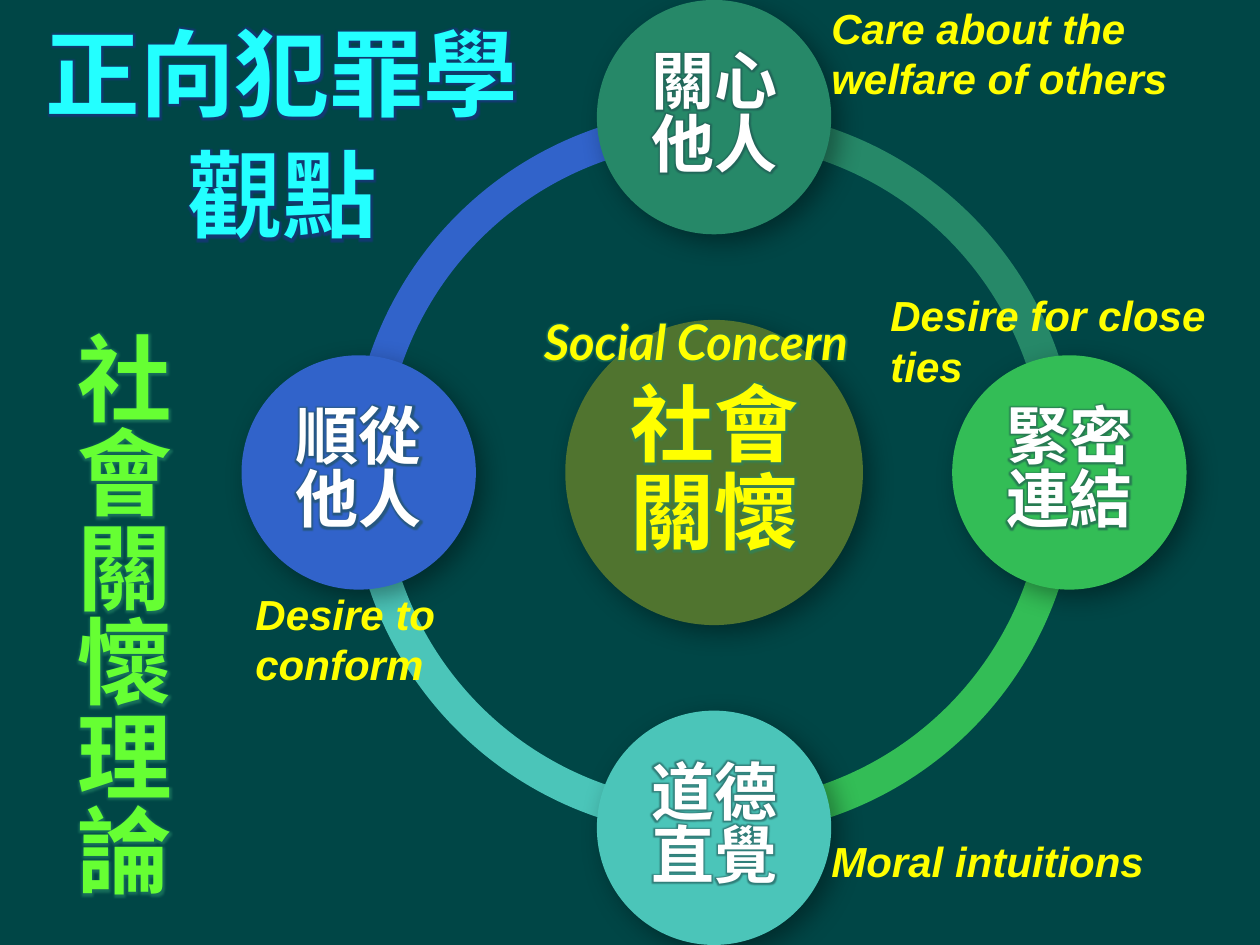
from math import cos, radians, sin

from lxml.etree import SubElement
from pptx import Presentation
from pptx.dml.color import RGBColor
from pptx.enum.shapes import MSO_SHAPE
from pptx.enum.text import MSO_ANCHOR, MSO_AUTO_SIZE, PP_ALIGN
from pptx.oxml.ns import qn
from pptx.util import Cm, Pt

CJK = "Noto Sans CJK SC"
YELLOW = "FFFF00"
GREEN_GLOW = "268868"

# Caption text, left, top, width (cm)
CAPTIONS = [
    ("Care about the welfare of others", 16.51, -0.08, 8.0),
    ("Desire for close ties", 17.7, 5.72, 7.62),
    ("Desire to conform", 4.9, 11.73, 7.01),
    ("Moral intuitions", 16.51, 16.71, 6.81),
]
# Wheel nodes clockwise from the top
NODES = [
    ("關心他人", "268868"),
    ("緊密連結", "33BD56"),
    ("道德直覺", "4BC5B9"),
    ("順從他人", "3163CA"),
]


def rgb(value):
    return RGBColor.from_string(value)


def add_color(parent, value, alpha):
    color = SubElement(parent, qn("a:srgbClr"), val=value)
    SubElement(color, qn("a:alpha"), val=str(alpha * 1000))


def add_run(p, text, size, color, font, italic=False, glow=None):
    r = p.add_run()
    r.text = text
    r.font.size = Pt(size)
    r.font.bold = True
    r.font.italic = italic
    r.font.color.rgb = rgb(color)
    r.font.name = font
    rPr = r.font._element
    latin = rPr.find(qn("a:latin"))
    ea = SubElement(rPr, qn("a:ea"), typeface=font)
    latin.addnext(ea)
    if glow:
        effects = SubElement(rPr, qn("a:effectLst"))
        halo = SubElement(effects, qn("a:glow"), rad=str(Pt(4)))
        add_color(halo, glow, 60)
        latin.addprevious(effects)


def add_plain(s, kind, x, y, w, h, color):
    sp = s.shapes.add_shape(kind, Cm(x), Cm(y), Cm(w), Cm(h))
    sp.fill.solid()
    sp.fill.fore_color.rgb = rgb(color)
    sp.line.fill.background()
    sp.shadow.inherit = False
    return sp


def add_disc(s, cx, cy, w, h, color, text, size, spacing, inset, text_color, font):
    sp = add_plain(s, MSO_SHAPE.OVAL, cx - w / 2, cy - h / 2, w, h, color)
    effects = sp._element.spPr.find(qn("a:effectLst"))
    shadow = SubElement(effects, qn("a:outerShdw"), blurRad=str(Pt(15)),
                        dist=str(Pt(6.2)), dir="2700000", rotWithShape="0")
    add_color(shadow, "000000", 36)
    tf = sp.text_frame
    tf.word_wrap = True
    tf.vertical_anchor = MSO_ANCHOR.MIDDLE
    tf.margin_left = tf.margin_right = tf.margin_top = tf.margin_bottom = Cm(inset)
    p = tf.paragraphs[0]
    p.alignment = PP_ALIGN.CENTER
    p.line_spacing = Pt(spacing)
    add_run(p, text, size, text_color, font, glow=GREEN_GLOW if size > 40 else "1F4F4F")


def add_wheel(s, x, y, size):
    cx, cy = x + size / 2, y + size / 2
    ring, node = size * 0.77, size * 0.248
    orbit = (size - node) / 2
    # Each quarter of the ring runs clockwise from its node
    for i, (_, color) in reversed(list(enumerate(NODES))):
        arc = add_plain(s, MSO_SHAPE.BLOCK_ARC, cx - ring / 2, cy - ring / 2,
                        ring, ring, color)
        arc.adjustments[0] = (162 + 54 * i) % 216
        arc.adjustments[1] = 54 * i
        arc.adjustments[2] = 0.046
    # Hub
    add_disc(s, cx, cy, size * 0.315, size * 0.323, "50742F",
             "社會關懷", 48, 50, 0.18, YELLOW, "Arial")
    # Nodes
    for i, (text, color) in enumerate(NODES):
        angle = radians(90 * i - 90)
        add_disc(s, cx + orbit * cos(angle), cy + orbit * sin(angle), node, node,
                 color, text, 36, 36, 0.13, "FFFFFF", CJK)


def add_label(s, text, x, y, w, h, size, color, font, italic=True, glow=None):
    sp = s.shapes.add_textbox(Cm(x), Cm(y), Cm(w), Cm(h))
    tf = sp.text_frame
    tf.word_wrap = True
    tf.auto_size = MSO_AUTO_SIZE.SHAPE_TO_FIT_TEXT
    add_run(tf.paragraphs[0], text, size, color, font, italic, glow)
    return sp


def add_title(s, x, y, w, h):
    sp = s.shapes.title
    sp.left, sp.top, sp.width, sp.height = Cm(x), Cm(y), Cm(w), Cm(h)
    tf = sp.text_frame
    tf.word_wrap = True
    tf.auto_size = MSO_AUTO_SIZE.NONE
    tf.vertical_anchor = MSO_ANCHOR.MIDDLE
    for i, line in enumerate(["正向犯罪學", "觀點"]):
        p = tf.add_paragraph() if i else tf.paragraphs[0]
        p.alignment = PP_ALIGN.CENTER
        p.line_spacing = 0.9
        pPr = p._p.get_or_add_pPr()
        pPr.set("marL", str(Cm(1.52)))
        pPr.set("indent", str(Cm(-1.14)))
        if i:
            before = SubElement(pPr, qn("a:spcBef"))
            SubElement(before, qn("a:spcPct"), val="20000")
        add_run(p, line, 54, "23FFFF", CJK, glow="1F2F8F")


def main():
    prs = Presentation()
    prs.slide_width, prs.slide_height = Cm(25.4), Cm(19.05)
    s = prs.slides.add_slide(prs.slide_layouts[5])
    s.background.fill.solid()
    s.background.fill.fore_color.rgb = rgb("004646")

    add_wheel(s, 4.87, 0, 19.05)

    # Captions around the wheel
    for text, x, y, w in CAPTIONS:
        add_label(s, text, x, y, w, 1.27, 24, YELLOW, "Arial")
    add_label(s, "Social Concern", 10.72, 6.15, 7.19, 1.45, 28, YELLOW, "Lato",
              glow=GREEN_GLOW)

    # Vertical theory name
    theory = add_label(s, "社會關懷理論", 0.89, 6.43, 2.82, 12.12, 54, "66FF33", CJK,
                       italic=False, glow=GREEN_GLOW)
    theory.text_frame._txBody.bodyPr.set("vert", "eaVert")

    add_title(s, 0.1, -0.08, 10.8, 5.79)
    prs.save("out.pptx")


if __name__ == "__main__":
    main()
